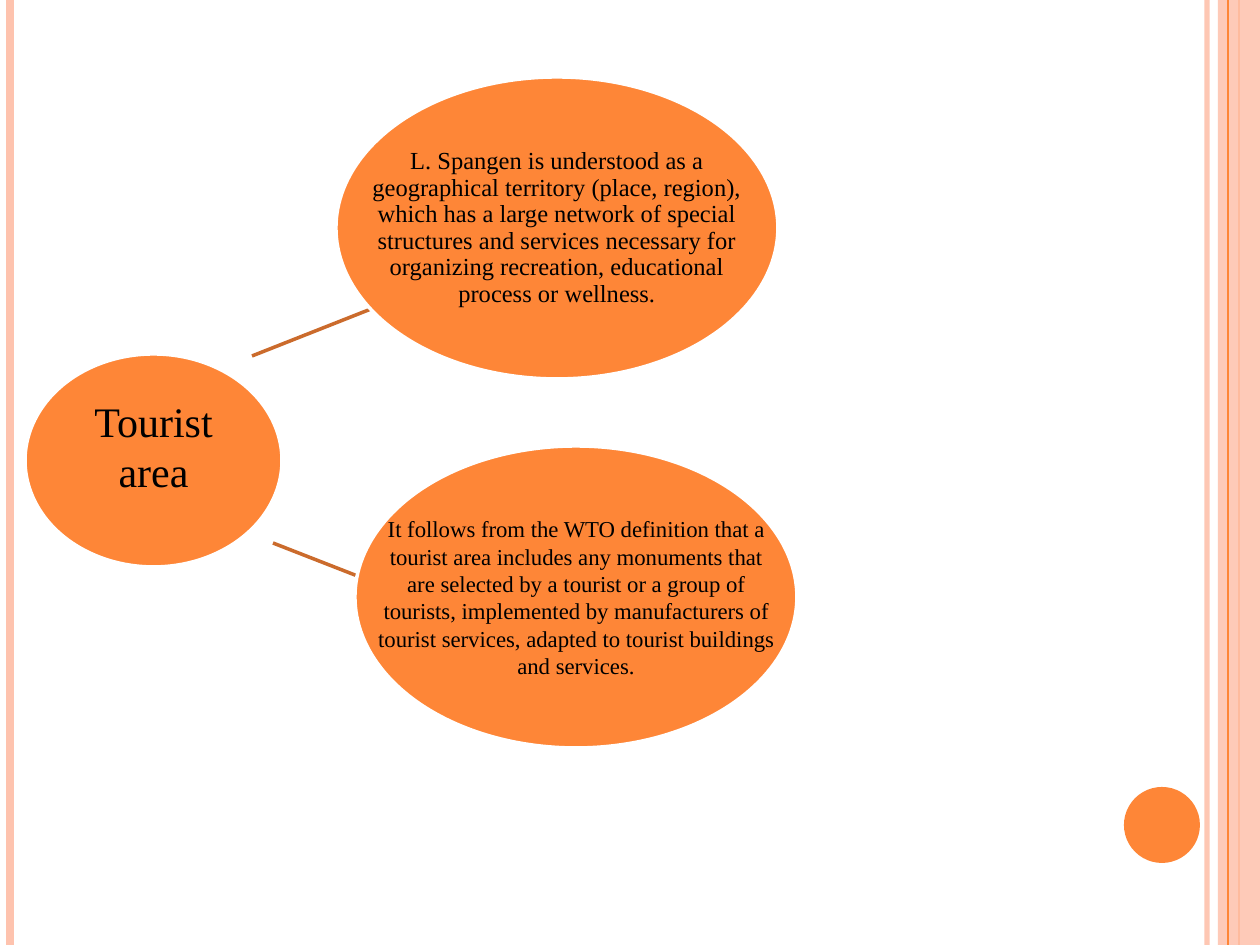
from lxml.etree import SubElement
from pptx import Presentation
from pptx.dml.color import RGBColor
from pptx.enum.shapes import MSO_CONNECTOR, MSO_SHAPE
from pptx.enum.text import MSO_ANCHOR, PP_ALIGN
from pptx.oxml.ns import qn
from pptx.util import Pt

EMU_PER_PX = 914400 / 126
WIDTH, HEIGHT = 1260, 945
FONT = "Times New Roman"
COLORS = {
    "orange": "FE8637",
    "peach": "FEC3AE",
    "branch": "CB6B2C",
    "white": "FFFFFF",
    "black": "000000",
}
CENTER_TEXT = "Tourist area"
SPANGEN_TEXT = (
    "L. Spangen is understood as a geographical territory (place, region), "
    "which has a large network of special structures and services necessary "
    "for organizing recreation, educational process or wellness."
)
WTO_TEXT = (
    "It follows from the WTO definition that a tourist area includes any "
    "monuments that are selected by a tourist or a group of tourists, "
    "implemented by manufacturers of tourist services, adapted to tourist "
    "buildings and services."
)


def px(length):
    """Convert pixels to EMU."""
    return round(length * EMU_PER_PX)


def rgb(name):
    """Look up a palette colour."""
    return RGBColor.from_string(COLORS[name])


def set_alpha(color_format_parent, percent):
    """Set the opacity of the solid fill inside an XML element."""
    color = color_format_parent.find(qn("a:solidFill"))[0]
    SubElement(color, qn("a:alpha"), val=str(percent * 1000))


def add_line(slide, start, end, color, weight, opacity=100):
    """Draw a straight line without a shadow."""
    line = slide.shapes.add_connector(
        MSO_CONNECTOR.STRAIGHT, *map(px, (*start, *end))
    )
    line.line.color.rgb = rgb(color)
    line.line.width = Pt(weight)
    properties = line._element.spPr
    if opacity < 100:
        set_alpha(properties.find(qn("a:ln")), opacity)
    SubElement(properties, qn("a:effectLst"))


def add_filled(slide, kind, box, color, outline=None):
    """Draw a flat filled shape, with an optional outline colour."""
    shape = slide.shapes.add_shape(kind, *map(px, box))
    shape.shadow.inherit = False
    shape.fill.solid()
    shape.fill.fore_color.rgb = rgb(color)
    if outline:
        shape.line.color.rgb = rgb(outline)
        shape.line.width = Pt(2)
    else:
        shape.line.fill.background()
    return shape


def add_bubble(slide, box, text, size, anchor, side_inset, top_inset=0, spacing=1.0):
    """Draw an ellipse that holds one centred paragraph."""
    bubble = add_filled(slide, MSO_SHAPE.OVAL, box, "orange", "white")
    frame = bubble.text_frame
    frame.word_wrap = True
    frame.vertical_anchor = anchor
    frame.margin_left = frame.margin_right = px(side_inset)
    frame.margin_top, frame.margin_bottom = px(top_inset), 0
    paragraph = frame.paragraphs[0]
    paragraph.text = text
    paragraph.alignment = PP_ALIGN.CENTER
    paragraph.line_spacing = spacing
    paragraph.font.name = FONT
    paragraph.font.size = Pt(size)
    paragraph.font.color.rgb = rgb("black")


def add_side_bands(slide, width, height):
    """Draw the vertical bands along both edges and the corner dot."""
    def add_rule(x, color, weight, opacity=100):
        """Draw one rule over the full height."""
        add_line(slide, (x, 0), (x, height), color, weight, opacity)

    add_rule(width - 53, "peach", 3, 93)
    add_rule(10, "peach", 4.5)
    add_rule(width - 21, "orange", 1.5)
    band = add_filled(
        slide, MSO_SHAPE.RECTANGLE, (width - 42, 0, 42, height), "peach"
    )
    set_alpha(band._element.spPr, 87)
    add_rule(width - 32, "orange", 0.75)
    add_filled(slide, MSO_SHAPE.OVAL, (width - 136, height - 158, 76, 76), "orange")


def add_definition_map(slide, left, top):
    """Draw the central term and the two definitions branching from it."""
    def place(x, y):
        """Shift a point into the region."""
        return left + x, top + y

    add_line(slide, place(248, 466), place(335, 500), "branch", 2)
    add_line(slide, place(227, 279), place(346, 232), "branch", 2)
    add_bubble(
        slide, (*place(0, 277), 257, 213), CENTER_TEXT, 24, MSO_ANCHOR.TOP, 10, 10
    )
    definition_size = (442, 302)
    add_bubble(
        slide, (*place(311, 0), *definition_size), SPANGEN_TEXT, 14,
        MSO_ANCHOR.MIDDLE, -44, spacing=0.9,
    )
    add_bubble(
        slide, (*place(330, 369), *definition_size), WTO_TEXT, 13,
        MSO_ANCHOR.MIDDLE, -44,
    )


def main():
    """Build and save the slide."""
    presentation = Presentation()
    presentation.slide_width = px(WIDTH)
    presentation.slide_height = px(HEIGHT)
    slide = presentation.slides.add_slide(presentation.slide_layouts[6])
    add_side_bands(slide, WIDTH, HEIGHT)
    add_definition_map(slide, 25, 77)
    presentation.save("out.pptx")


if __name__ == "__main__":
    main()
